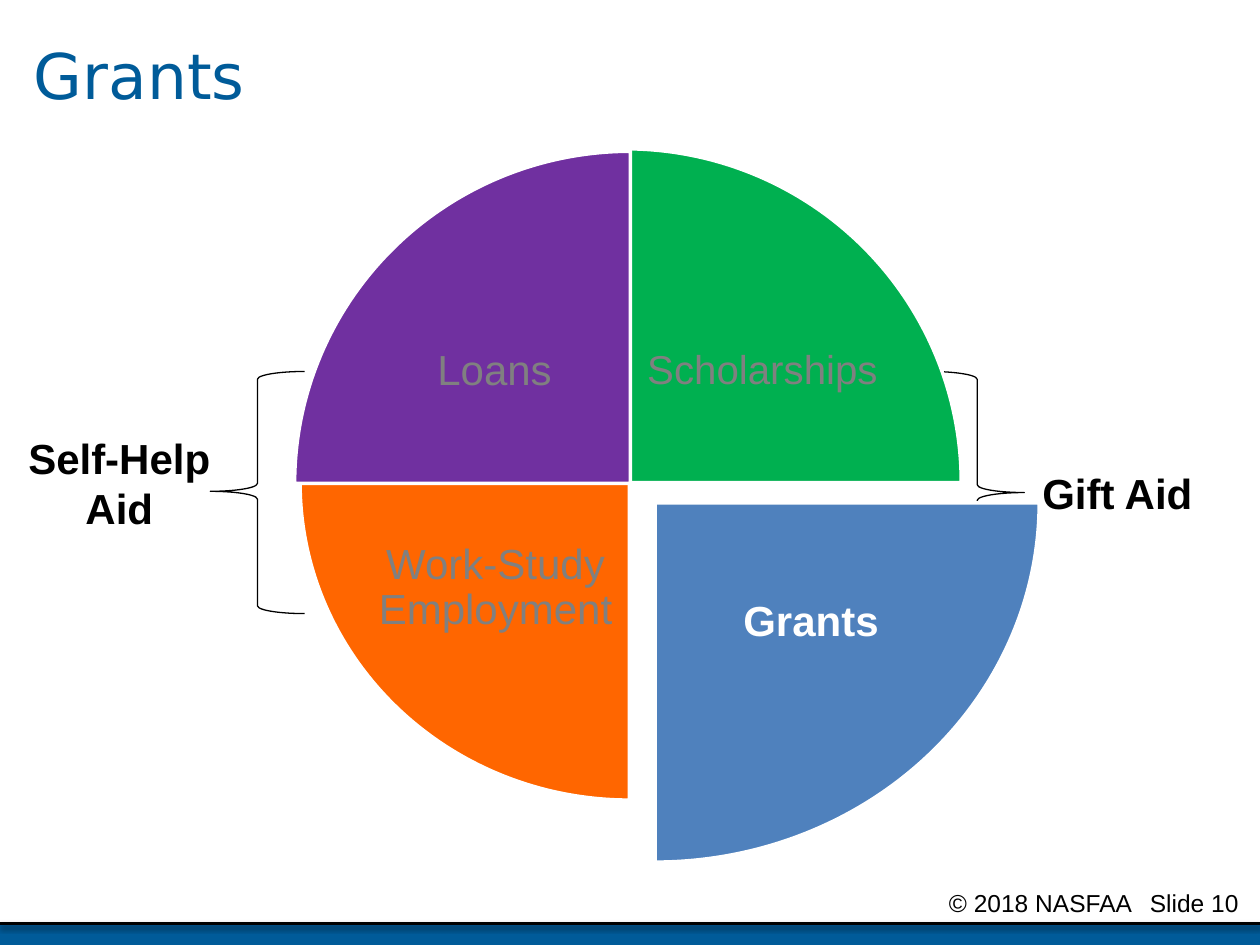
from lxml import etree
from pptx import Presentation
from pptx import util as u
from pptx.dml.color import RGBColor
from pptx.enum import shapes, text
from pptx.oxml import ns, parse_xml

COLORS = {
    "navy": "005B99", "black": "000000", "white": "FFFFFF", "gray": "808080",
    "green": "00B050", "blue": "4F81BD", "orange": "FF6600", "purple": "7030A0",
}
ALIGN = text.PP_ALIGN
ANCHOR = text.MSO_ANCHOR


def color(name):
    return RGBColor.from_string(COLORS[name])


def write(frame, words, size=24, ink="black", bold=False, font="Arial",
          align=ALIGN.CENTER, anchor=ANCHOR.TOP, spacing=None, inset=None, tab=None):
    frame.word_wrap = True
    frame.vertical_anchor = anchor
    if inset is not None:
        frame.margin_left = frame.margin_right = u.Cm(inset)
    paragraph = frame.paragraphs[0]
    paragraph.text = words
    paragraph.alignment = align
    paragraph.line_spacing = spacing
    if tab:
        stops = etree.SubElement(paragraph._p.get_or_add_pPr(), ns.qn("a:tabLst"))
        etree.SubElement(stops, ns.qn("a:tab"), pos=str(u.Cm(tab)), algn="l")
    style = paragraph.runs[0].font
    style.name, style.size, style.bold = font, u.Pt(size), bold
    style.color.rgb = color(ink)


prs = Presentation()
prs.slide_width, prs.slide_height = u.Cm(25.4), u.Cm(19.05)
slide = prs.slides.add_slide(prs.slide_layouts[5])
parts = slide.shapes

footer_top = 18.62
band = parts.add_shape(shapes.MSO_SHAPE.RECTANGLE, 0, u.Cm(footer_top), u.Cm(25.4), u.Cm(0.43))
band.shadow.inherit = False
band.fill.solid()
band.fill.fore_color.rgb = color("navy")
band.line.fill.background()

rule = parts.add_connector(shapes.MSO_CONNECTOR.STRAIGHT, 0, u.Cm(footer_top), u.Cm(25.4), u.Cm(footer_top))
rule.line.color.rgb = color("black")
rule.line.width = u.Pt(2)
rule._element.spPr.append(parse_xml(
    f'<a:effectLst {ns.nsdecls("a")}>'
    '<a:outerShdw blurRad="40000" dist="20000" dir="5400000" rotWithShape="0">'
    '<a:srgbClr val="000000"><a:alpha val="38000"/></a:srgbClr>'
    '</a:outerShdw></a:effectLst>'))

copyright_line = parts.add_textbox(u.Cm(19.13), u.Cm(17.78), u.Cm(6.27), u.Cm(0.64))
write(copyright_line.text_frame, "© 2018 NASFAA\tSlide 10", size=14, align=ALIGN.LEFT, inset=0, tab=4.05)

title = parts.title
title.left, title.top, title.width, title.height = u.Cm(0.43), u.Cm(0), u.Cm(24.56), u.Cm(3.18)
write(title.text_frame, "Grants", size=36, ink="navy", font="DejaVu Sans",
      align=ALIGN.LEFT, anchor=ANCHOR.MIDDLE, spacing=0.9)

braces = [
    (shapes.MSO_SHAPE.RIGHT_BRACE, 18.75, 0.5),
    (shapes.MSO_SHAPE.LEFT_BRACE, 4.24, 0.495),
]
for outline, left, tip in braces:
    brace = parts.add_shape(outline, u.Cm(left), u.Cm(7.49), u.Cm(1.9), u.Cm(4.88))
    brace.shadow.inherit = False
    brace.fill.background()
    brace.line.color.rgb = color("black")
    brace.line.width = u.Pt(0.75)
    brace.adjustments[0], brace.adjustments[1] = 0.083, tip

quarter = 54
quarters = [
    ("Scholarships", "green", 3, (5.84, 3, 13.54, 13.46), (12.78, 5.49, 5, 4.01),
     dict(size=23, ink="gray", align=ALIGN.RIGHT)),
    ("Grants", "blue", 0, (5.46, 2.9, 15.49, 14.48), (13.49, 10.39, 5.72, 4.32),
     dict(ink="white", bold=True)),
    ("Work-Study Employment", "orange", 1, (6.05, 3.35, 13.28, 12.78), (7.54, 9.96, 4.9, 3.81),
     dict(ink="gray")),
    ("Loans", "purple", 2, (5.94, 3.05, 13.54, 13.39), (7.47, 5.51, 5, 3.99),
     dict(ink="gray")),
]
for name, fill, turn, pie_box, label_box, look in quarters:
    wedge = parts.add_shape(shapes.MSO_SHAPE.PIE, *map(u.Cm, pie_box))
    wedge.shadow.inherit = False
    wedge.fill.solid()
    wedge.fill.fore_color.rgb = color(fill)
    wedge.line.color.rgb = color("white")
    wedge.line.width = u.Pt(2)
    wedge.adjustments[0] = turn * quarter
    wedge.adjustments[1] = (turn + 1) % 4 * quarter
    label = parts.add_textbox(*map(u.Cm, label_box))
    write(label.text_frame, name, anchor=ANCHOR.MIDDLE, spacing=0.9, inset=0.08, **look)

aid_types = [
    ("Gift Aid", (20.47, 9.3, 4.11, 1.27)),
    ("Self-Help Aid", (0.28, 8.59, 4.25, 2.31)),
]
for name, box in aid_types:
    aid = parts.add_textbox(*map(u.Cm, box))
    write(aid.text_frame, name, bold=True)

prs.save("out.pptx")
